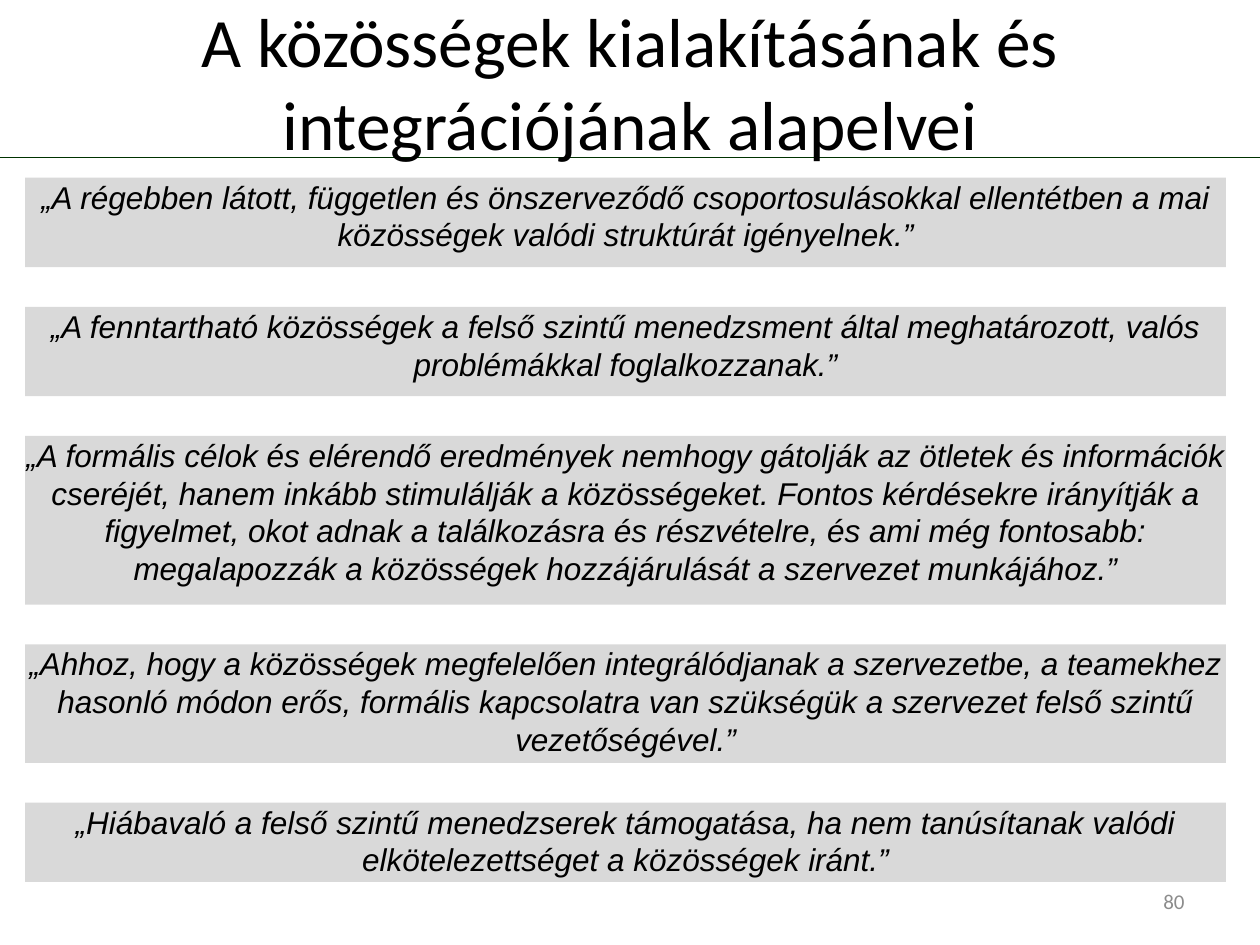
from pptx import Presentation
from pptx.dml.color import RGBColor
from pptx.enum.shapes import MSO_CONNECTOR, MSO_SHAPE
from pptx.enum.text import MSO_ANCHOR, PP_ALIGN
from pptx.oxml.ns import qn
from pptx.util import Inches, Pt
from lxml import etree

RECTANGLE = MSO_SHAPE.RECTANGLE
STRAIGHT = MSO_CONNECTOR.STRAIGHT
TOP, MIDDLE = MSO_ANCHOR.TOP, MSO_ANCHOR.MIDDLE
CENTER, RIGHT = PP_ALIGN.CENTER, PP_ALIGN.RIGHT

COLORS = {
    "text": "000000",
    "rule": "003300",
    "panel": "D9D9D9",
    "number": "8C8C8C",
}


def write_text(shape, text, size, font="Calibri", color="text", align=CENTER,
               anchor=MIDDLE, italic=False, space_before=0, inset=None):
    frame = shape.text_frame
    frame.word_wrap = True
    frame.vertical_anchor = anchor
    if inset is not None:
        frame.margin_left = frame.margin_right = Inches(inset)
        frame.margin_top = frame.margin_bottom = Inches(inset)
    paragraph = frame.paragraphs[0]
    paragraph.alignment = align
    paragraph.space_before = Pt(space_before)
    run = paragraph.add_run()
    run.text = text
    run.font.size = Pt(size)
    run.font.name = font
    run.font.italic = italic
    run.font.color.rgb = RGBColor.from_string(COLORS[color])


prs = Presentation()
prs.slide_width = Inches(10)
prs.slide_height = Inches(7.5)
slide = prs.slides.add_slide(prs.slide_layouts[6])

rule = slide.shapes.add_connector(
    STRAIGHT, Inches(0), Inches(1.25), Inches(10), Inches(1.25))
rule.line.color.rgb = RGBColor.from_string(COLORS["rule"])
rule.line.width = Pt(1)
etree.SubElement(rule._element.spPr, qn("a:effectLst"))

title = slide.shapes.add_textbox(Inches(0), Inches(0.3), Inches(10), Inches(0.69))
write_text(title, "A közösségek kialakításának és integrációjának alapelvei", size=39.6)

principles = [
    (0.71, "„A régebben látott, független és önszerveződő csoportosulásokkal "
           "ellentétben a mai közösségek valódi struktúrát igényelnek.”"),
    (0.71, "„A fenntartható közösségek a felső szintű menedzsment által "
           "meghatározott, valós problémákkal foglalkozzanak.”"),
    (1.34, "„A formális célok és elérendő eredmények nemhogy gátolják az ötletek "
           "és információk cseréjét, hanem inkább stimulálják a közösségeket. "
           "Fontos kérdésekre irányítják a figyelmet, okot adnak a találkozásra "
           "és részvételre, és ami még fontosabb: megalapozzák a közösségek "
           "hozzájárulását a szervezet munkájához.”"),
    (0.94, "„Ahhoz, hogy a közösségek megfelelően integrálódjanak a szervezetbe, "
           "a teamekhez hasonló módon erős, formális kapcsolatra van szükségük "
           "a szervezet felső szintű vezetőségével.”"),
    (0.63, "„Hiábavaló a felső szintű menedzserek támogatása, ha nem tanúsítanak "
           "valódi elkötelezettséget a közösségek iránt.”"),
]

first_top, last_bottom = 1.41, 7
total_height = sum(height for height, _ in principles)
gap = (last_bottom - first_top - total_height) / (len(principles) - 1)

top = first_top
for height, quote in principles:
    panel = slide.shapes.add_shape(
        RECTANGLE, Inches(0.2), Inches(top), Inches(9.53), Inches(height))
    panel.shadow.inherit = False
    panel.fill.solid()
    panel.fill.fore_color.rgb = RGBColor.from_string(COLORS["panel"])
    panel.line.fill.background()
    write_text(panel, quote, size=18, font="Arial", italic=True,
               anchor=TOP, space_before=12, inset=0)
    top += height + gap

page_number = slide.shapes.add_textbox(
    Inches(7.17), Inches(6.95), Inches(2.33), Inches(0.4))
write_text(page_number, "80", size=12, color="number", align=RIGHT)

prs.save("out.pptx")
